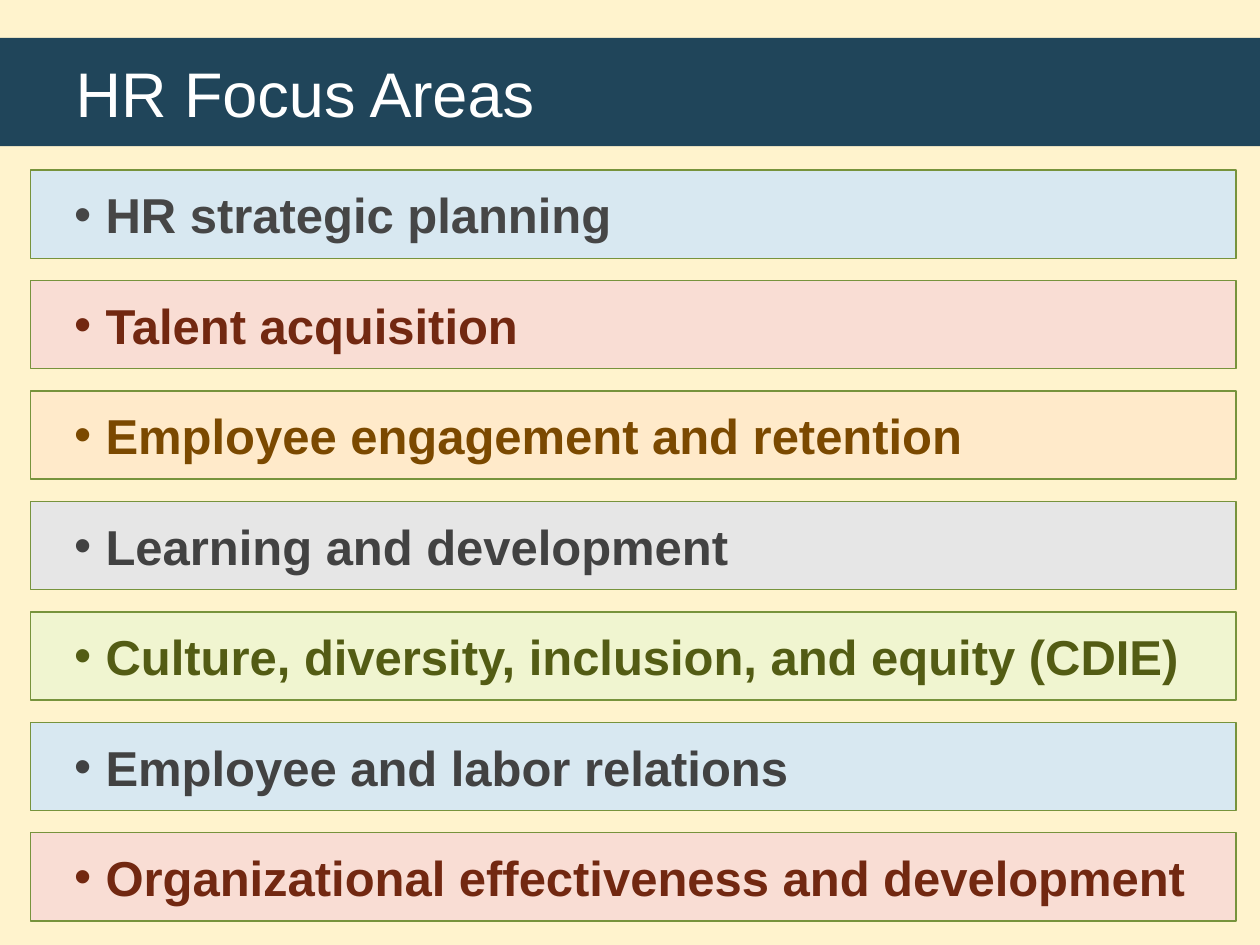
from lxml import etree
from pptx import Presentation
from pptx import util as u
from pptx.dml.color import RGBColor
from pptx.enum import shapes, text
from pptx.oxml.ns import qn

CREAM = RGBColor(0xFF, 0xF3, 0xCD)
NAVY = RGBColor(0x20, 0x45, 0x5A)
WHITE = RGBColor(0xFF, 0xFF, 0xFF)
GREEN = RGBColor(0x77, 0x93, 0x3C)
PALE_BLUE = RGBColor(0xD8, 0xE8, 0xF1)
PALE_RED = RGBColor(0xF9, 0xDD, 0xD4)
PALE_ORANGE = RGBColor(0xFF, 0xEA, 0xCA)
PALE_GRAY = RGBColor(0xE6, 0xE6, 0xE6)
PALE_GREEN = RGBColor(0xF0, 0xF5, 0xD0)
CHARCOAL = RGBColor(0x46, 0x46, 0x46)
DARK_GRAY = RGBColor(0x42, 0x42, 0x42)
DARK_RED = RGBColor(0x72, 0x28, 0x11)
BROWN = RGBColor(0x7B, 0x49, 0x00)
OLIVE = RGBColor(0x53, 0x5C, 0x14)

FONT = "Arial"
FIRST_TOP, LAST_TOP = 1.35, 6.61
FOCUS_AREAS = [
    ("HR strategic planning", PALE_BLUE, CHARCOAL),
    ("Talent acquisition", PALE_RED, DARK_RED),
    ("Employee engagement and retention", PALE_ORANGE, BROWN),
    ("Learning and development", PALE_GRAY, DARK_GRAY),
    ("Culture, diversity, inclusion, and equity (CDIE)", PALE_GREEN, OLIVE),
    ("Employee and labor relations", PALE_BLUE, DARK_GRAY),
    ("Organizational effectiveness and development", PALE_RED, DARK_RED),
]


def fill_shape(box, color):
    box.fill.solid()
    box.fill.fore_color.rgb = color


def set_text(box, words, size, color, bold=False):
    frame = box.text_frame
    frame.text = words
    frame.word_wrap = True
    frame.auto_size = text.MSO_AUTO_SIZE.NONE
    frame.vertical_anchor = text.MSO_ANCHOR.MIDDLE
    paragraph = frame.paragraphs[0]
    paragraph.alignment = text.PP_ALIGN.LEFT
    span = paragraph.runs[0]
    span.font.name = FONT
    span.font.size = u.Pt(size)
    span.font.bold = bold
    span.font.color.rgb = color
    return paragraph


def set_indent(paragraph, margin, indent):
    properties = paragraph._p.get_or_add_pPr()
    properties.set("marL", str(u.Inches(margin)))
    properties.set("indent", str(u.Inches(indent)))
    return properties


def add_bullet(paragraph):
    properties = set_indent(paragraph, 0.5, -0.25)
    etree.SubElement(properties, qn("a:buFont"), typeface=FONT)
    etree.SubElement(properties, qn("a:buChar"), char="•")


def format_title(page):
    title = page.shapes.title
    title.left, title.top = u.Inches(0), u.Inches(0.3)
    title.width, title.height = u.Inches(10), u.Inches(0.86)
    fill_shape(title, NAVY)
    paragraph = set_text(title, "HR Focus Areas", 36, WHITE)
    set_indent(paragraph, 0, 0.5)


def add_focus_bar(page, top, words, fill, color):
    bar = page.shapes.add_shape(
        shapes.MSO_SHAPE.RECTANGLE,
        u.Inches(0.24), u.Inches(top), u.Inches(9.57), u.Inches(0.7),
    )
    bar.shadow.inherit = False
    fill_shape(bar, fill)
    bar.line.color.rgb = GREEN
    bar.line.width = u.Pt(0.75)
    add_bullet(set_text(bar, words, 28, color, bold=True))


def main():
    deck = Presentation()
    deck.slide_width, deck.slide_height = u.Inches(10), u.Inches(7.5)
    page = deck.slides.add_slide(deck.slide_layouts[5])
    fill_shape(page.background, CREAM)
    format_title(page)
    pitch = (LAST_TOP - FIRST_TOP) / (len(FOCUS_AREAS) - 1)
    for row, (words, fill, color) in enumerate(FOCUS_AREAS):
        add_focus_bar(page, FIRST_TOP + row * pitch, words, fill, color)
    deck.save("out.pptx")


if __name__ == "__main__":
    main()
